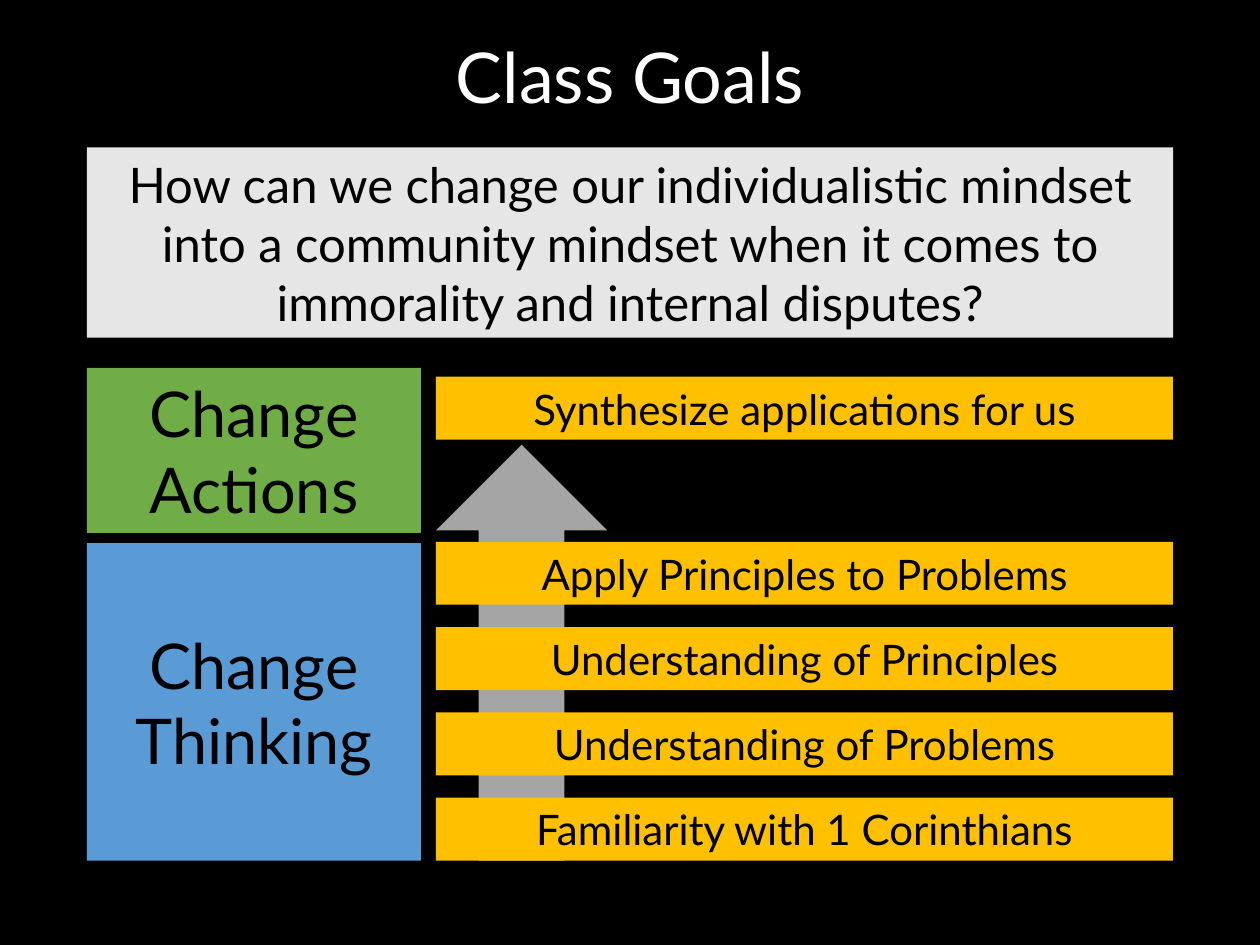
from pptx import Presentation
from pptx.dml.color import RGBColor
from pptx.enum.shapes import MSO_SHAPE
from pptx.enum.text import MSO_ANCHOR, PP_ALIGN
from pptx.util import Inches, Pt

BLACK = RGBColor(0x00, 0x00, 0x00)
WHITE = RGBColor(0xFF, 0xFF, 0xFF)
LIGHT = RGBColor(0xE7, 0xE6, 0xE6)
GRAY = RGBColor(0xA5, 0xA5, 0xA5)
GREEN = RGBColor(0x70, 0xAD, 0x47)
BLUE = RGBColor(0x5B, 0x9B, 0xD5)
GOLD = RGBColor(0xFF, 0xC0, 0x00)
FONT = "Lato"

TITLE = "Class Goals"
QUESTION = ("How can we change our individualistic mindset into a community "
            "mindset when it comes to immorality and internal disputes?")
CHANGES = [("Change Actions", 2.92, 1.31, GREEN),
           ("Change Thinking", 4.31, 2.52, BLUE)]
TOP_STEP = "Synthesize applications for us"
STEPS = ["Apply Principles to Problems", "Understanding of Principles",
         "Understanding of Problems", "Familiarity with 1 Corinthians"]

LEFT, RIGHT, BOTTOM = 0.69, 9.31, 6.83
STEP_LEFT, STEP_HEIGHT, STEP_TOP, STEP_PITCH = 3.46, 0.5, 4.3, 0.677
ARROW_TOP, ARROW_WIDTH = 3.53, 1.36


def write(sp, text, size, color=BLACK, spacing=1.0):
    tf = sp.text_frame
    tf.word_wrap = True
    tf.vertical_anchor = MSO_ANCHOR.MIDDLE
    p = tf.paragraphs[0]
    p.alignment = PP_ALIGN.CENTER
    p.line_spacing = spacing
    r = p.add_run()
    r.text = text
    r.font.name = FONT
    r.font.size = Pt(size)
    r.font.color.rgb = color


def add_block(s, box, fill, kind=MSO_SHAPE.RECTANGLE):
    sp = s.shapes.add_shape(kind, *map(Inches, box))
    sp.shadow.inherit = False
    sp.fill.solid()
    sp.fill.fore_color.rgb = fill
    sp.line.fill.background()
    return sp


def main():
    prs = Presentation()
    prs.slide_width, prs.slide_height = Inches(10), Inches(7.5)
    s = prs.slides.add_slide(prs.slide_layouts[5])
    s.background.fill.solid()
    s.background.fill.fore_color.rgb = BLACK

    title = s.shapes.title
    title.left, title.top = Inches(LEFT), Inches(0.25)
    title.width, title.height = Inches(RIGHT - LEFT), Inches(0.79)
    write(title, TITLE, 40, color=WHITE, spacing=0.9)

    add_block(s, (STEP_LEFT, ARROW_TOP, ARROW_WIDTH, BOTTOM - ARROW_TOP),
              GRAY, MSO_SHAPE.UP_ARROW)
    write(add_block(s, (LEFT, 1.17, RIGHT - LEFT, 1.51), LIGHT), QUESTION, 28)
    for text, top, height, fill in CHANGES:
        write(add_block(s, (LEFT, top, 2.65, height), fill), text, 36)

    steps = [(TOP_STEP, 2.99)]
    steps += [(text, STEP_TOP + i * STEP_PITCH) for i, text in enumerate(STEPS)]
    for text, top in steps:
        box = (STEP_LEFT, top, RIGHT - STEP_LEFT, STEP_HEIGHT)
        write(add_block(s, box, GOLD), text, 24)

    prs.save("out.pptx")


if __name__ == "__main__":
    main()
